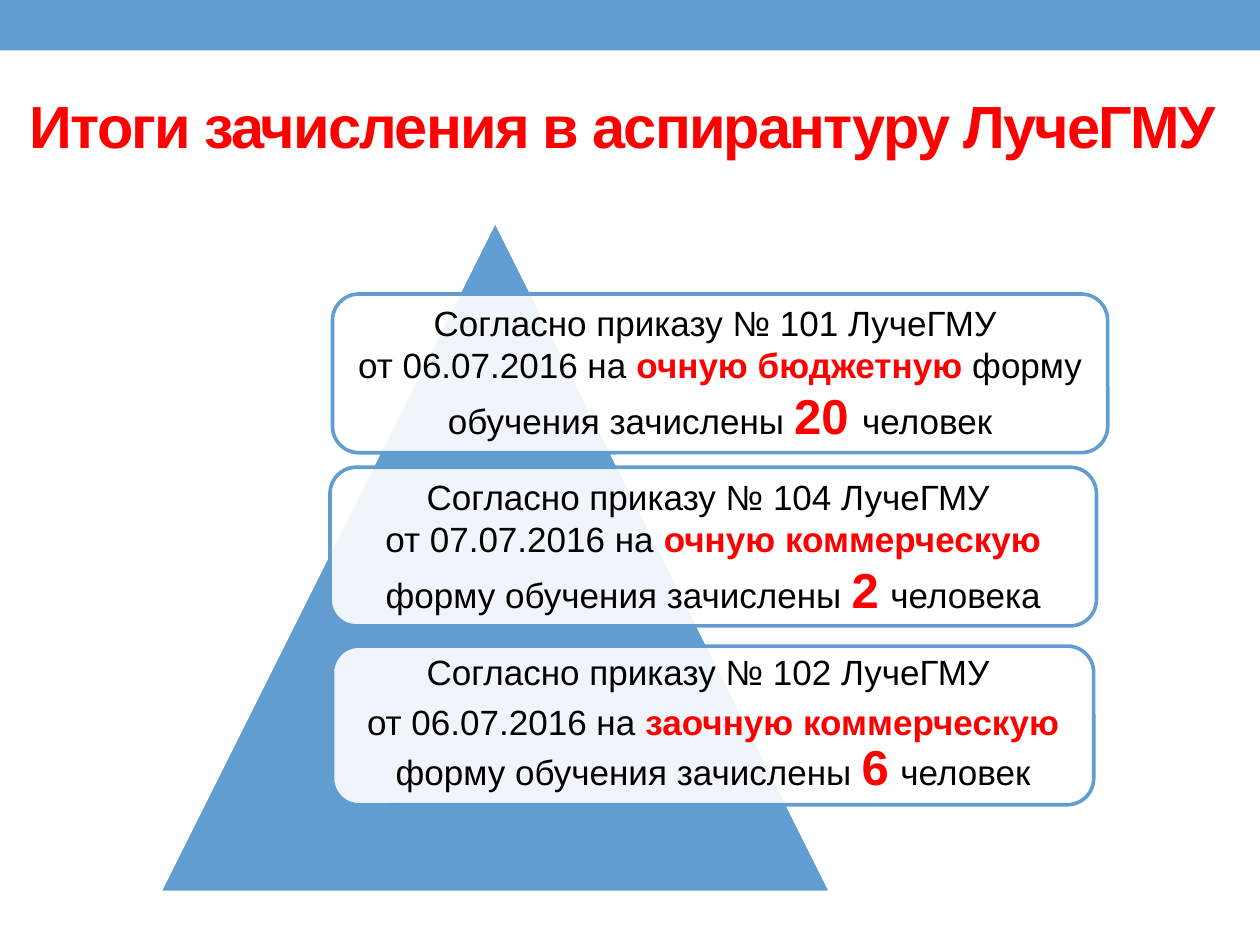
from dataclasses import dataclass
from typing import Any, Optional

import pptx
import pptx.dml.color
import pptx.enum.shapes
import pptx.enum.text
import pptx.oxml.ns
import pptx.util
from lxml import etree

Pt = pptx.util.Pt
Shapes = pptx.enum.shapes.MSO_SHAPE
UNIVERSITY = "ЛучеГМУ"
COLORS = {"blue": "629DD1", "white": "FFFFFF", "red": "FF0000", "black": "000000"}
FRAME_FORMAT = {
    "word_wrap": True,
    "vertical_anchor": pptx.enum.text.MSO_ANCHOR.MIDDLE,
    "margin_left": Pt(6),
    "margin_right": Pt(6),
    "margin_top": Pt(6),
    "margin_bottom": Pt(6),
}
CENTERED = {"alignment": pptx.enum.text.PP_ALIGN.CENTER}
LOOSE = {**CENTERED, "line_spacing": 0.9, "space_after": Pt(7)}
PLAIN = {"name": "Arial", "size": Pt(20), "bold": False}
STRONG = {**PLAIN, "bold": True}
NUMBER = {**STRONG, "size": Pt(28)}
TITLE = {**STRONG, "size": Pt(34)}


@dataclass
class Box:
    left: float
    top: float
    width: float
    height: float

    def lengths(self) -> list:
        return [Pt(value) for value in (self.left, self.top, self.width, self.height)]


@dataclass
class Order:
    box: Box
    number: str
    date: str
    study_form: str
    before_count: str
    count: str
    gap_size: float
    people: str
    paragraph_format: dict


ORDERS = [
    Order(Box(190, 168, 443, 90.7), "101", "06.07.2016", "очную бюджетную",
          " форму обучения зачислены ", "20", 28, "человек", CENTERED),
    Order(Box(188.6, 267, 438, 90.7), "104", "07.07.2016", "очную коммерческую",
          " форму обучения зачислены ", "2", 24, "человека", CENTERED),
    Order(Box(190, 369.2, 435, 90.7), "102", "06.07.2016", "заочную коммерческую ",
          "форму обучения зачислены ", "6", 24, "человек", LOOSE),
]


def apply_format(target: Any, values: dict) -> None:
    for name, value in values.items():
        setattr(target, name, value)


def color(name: str) -> Any:
    return pptx.dml.color.RGBColor.from_string(COLORS[name])


def add_figure(slide: Any, kind: Any, box: Box, fill: str, line: Optional[str] = None) -> Any:
    shape = slide.shapes.add_shape(kind, *box.lengths())
    shape.shadow.inherit = False
    shape.fill.solid()
    shape.fill.fore_color.rgb = color(fill)
    if line:
        shape.line.color.rgb = color(line)
        shape.line.width = Pt(2.08)
    else:
        shape.line.fill.background()
    return shape


def set_opacity(shape: Any, percent: int) -> None:
    fill_color = shape.fill._xPr.find(".//" + pptx.oxml.ns.qn("a:srgbClr"))
    alpha = etree.SubElement(fill_color, pptx.oxml.ns.qn("a:alpha"))
    alpha.set("val", str(percent * 1000))


def add_run(paragraph: Any, text: str, font_format: dict, color_name: str) -> Any:
    run = paragraph.add_run()
    run.text = text
    apply_format(run.font, font_format)
    run.font.color.rgb = color(color_name)
    return run


def add_title(slide: Any, box: Box, text: str) -> None:
    shape = slide.shapes.add_textbox(*box.lengths())
    apply_format(shape.text_frame, FRAME_FORMAT)
    paragraph = shape.text_frame.paragraphs[0]
    apply_format(paragraph, CENTERED)
    run = add_run(paragraph, text, TITLE, "red")
    run.font._element.set("spc", "-100")


def add_order(slide: Any, order: Order) -> None:
    shape = add_figure(slide, Shapes.ROUNDED_RECTANGLE, order.box, "white", "blue")
    set_opacity(shape, 90)
    apply_format(shape.text_frame, FRAME_FORMAT)
    heading = shape.text_frame.paragraphs[0]
    details = shape.text_frame.add_paragraph()
    for paragraph in (heading, details):
        apply_format(paragraph, order.paragraph_format)
    add_run(heading, f"Согласно приказу № {order.number} {UNIVERSITY} ", PLAIN, "black")
    add_run(details, f"от {order.date} на ", PLAIN, "black")
    add_run(details, order.study_form, STRONG, "red")
    add_run(details, order.before_count, PLAIN, "black")
    add_run(details, order.count, NUMBER, "red")
    add_run(details, " ", {**PLAIN, "size": Pt(order.gap_size)}, "black")
    add_run(details, order.people, PLAIN, "black")


def main() -> None:
    presentation = pptx.Presentation()
    presentation.slide_width = Pt(720)
    presentation.slide_height = Pt(540)
    slide = presentation.slides.add_slide(presentation.slide_layouts[6])
    add_figure(slide, Shapes.RECTANGLE, Box(0, 0, 720, 28.8), "blue")
    add_title(slide, Box(0, 26, 720, 90.7), f"Итоги зачисления в аспирантуру {UNIVERSITY} ")
    add_figure(slide, Shapes.ISOSCELES_TRIANGLE, Box(91, 126, 384, 384), "blue", "white")
    for order in ORDERS:
        add_order(slide, order)
    presentation.save("out.pptx")


if __name__ == "__main__":
    main()
